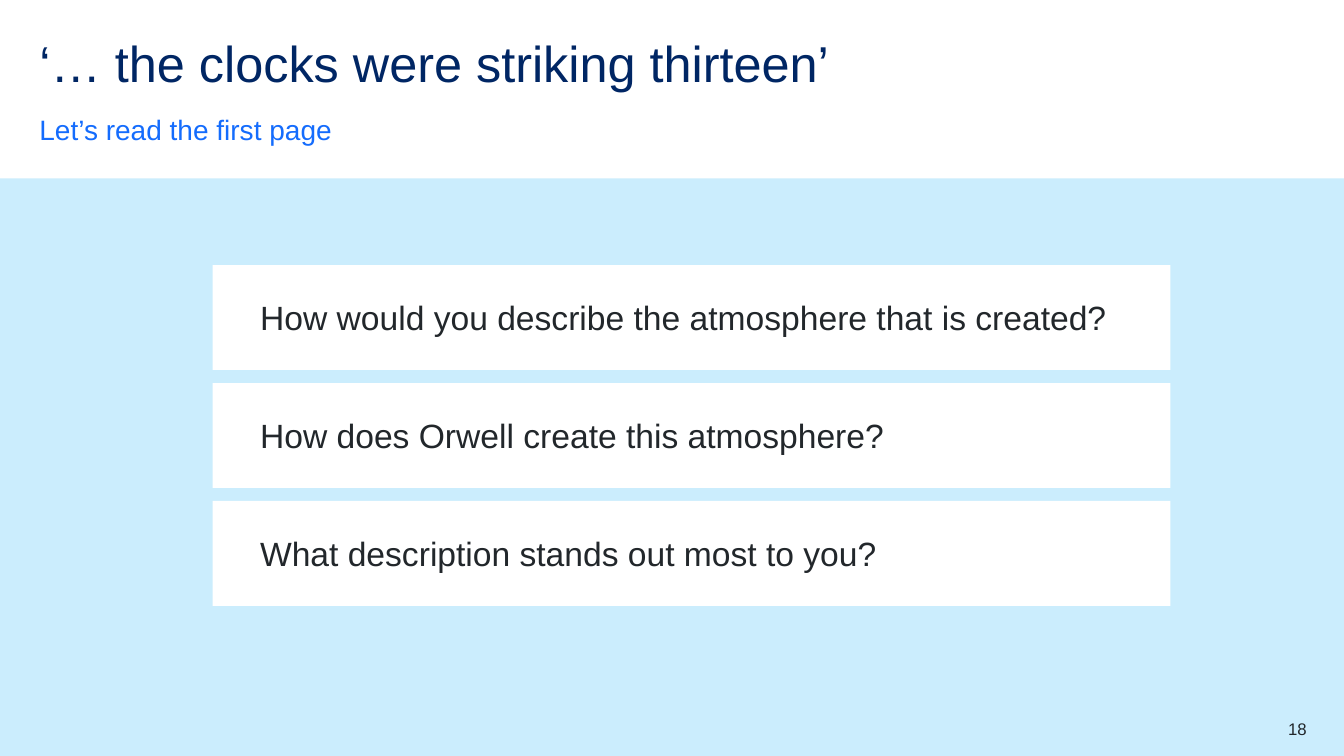
"""Build a slide with a heading and three reading questions."""
from pptx import Presentation
from pptx.dml.color import RGBColor
from pptx.enum.shapes import MSO_SHAPE
from pptx.enum.text import MSO_ANCHOR, PP_ALIGN
from pptx.util import Inches, Pt

WIDTH, HEIGHT = 13.33, 7.5
INK = "22272B"
LABELS = [
    ("‘… the clocks were striking thirteen’", (0.39, 0.39, 11.22, 0.57), 36, "002664",
     MSO_ANCHOR.TOP, {"line_spacing": 0.9}),
    ("Let’s read the first page", (0.39, 1.11, 11.02, 0.34), 20, "146CFD",
     MSO_ANCHOR.BOTTOM, {"line_spacing": 1.5, "space_after": Pt(12)}),
    ("18", (12.17, 7.13, 0.79, 0.2), 12, INK,
     MSO_ANCHOR.TOP, {"alignment": PP_ALIGN.RIGHT}),
]
ASKS = [
    "How would you describe the atmosphere that is created?",
    "How does Orwell create this atmosphere?",
    "What description stands out most to you?",
]
BAND_TOP = 1.77
CARD_LEFT, CARD_TOP, CARD_WIDE, CARD_HIGH, CARD_STEP = 2.11, 2.63, 9.5, 1.04, 1.17
CARD_PAD = (0.47, 0.05, 0.1, 0.05)


def tint(code):
    return RGBColor.from_string(code)


def apply(item, values):
    for name, value in values.items():
        setattr(item, name, value)


def write(shape, text, size, code, anchor, pad, style):
    frame = shape.text_frame
    sides = ("margin_left", "margin_top", "margin_right", "margin_bottom")
    apply(frame, dict(zip(sides, map(Inches, pad))))
    apply(frame, {"word_wrap": True, "vertical_anchor": anchor})
    line = frame.paragraphs[0]
    apply(line, {"alignment": PP_ALIGN.LEFT, **style})
    run = line.add_run()
    run.text = text
    apply(run.font, {"name": "Arial", "size": Pt(size)})
    run.font.color.rgb = tint(code)


def panel(slide, place, code):
    shape = slide.shapes.add_shape(MSO_SHAPE.RECTANGLE, *map(Inches, place))
    shape.shadow.inherit = False
    shape.fill.solid()
    shape.fill.fore_color.rgb = tint(code)
    shape.line.fill.background()
    return shape


def main():
    deck = Presentation()
    apply(deck, {"slide_width": Inches(WIDTH), "slide_height": Inches(HEIGHT)})
    slide = deck.slides.add_slide(deck.slide_layouts[6])
    panel(slide, (0, BAND_TOP, WIDTH, HEIGHT - BAND_TOP), "CBEDFD")
    for text, place, size, code, anchor, style in LABELS:
        box = slide.shapes.add_textbox(*map(Inches, place))
        write(box, text, size, code, anchor, (0, 0, 0, 0), style)
    for row, ask in enumerate(ASKS):
        place = (CARD_LEFT, CARD_TOP + row * CARD_STEP, CARD_WIDE, CARD_HIGH)
        card = panel(slide, place, "FFFFFF")
        write(card, ask, 24, INK, MSO_ANCHOR.MIDDLE, CARD_PAD, {})
    deck.save("out.pptx")


if __name__ == "__main__":
    main()
